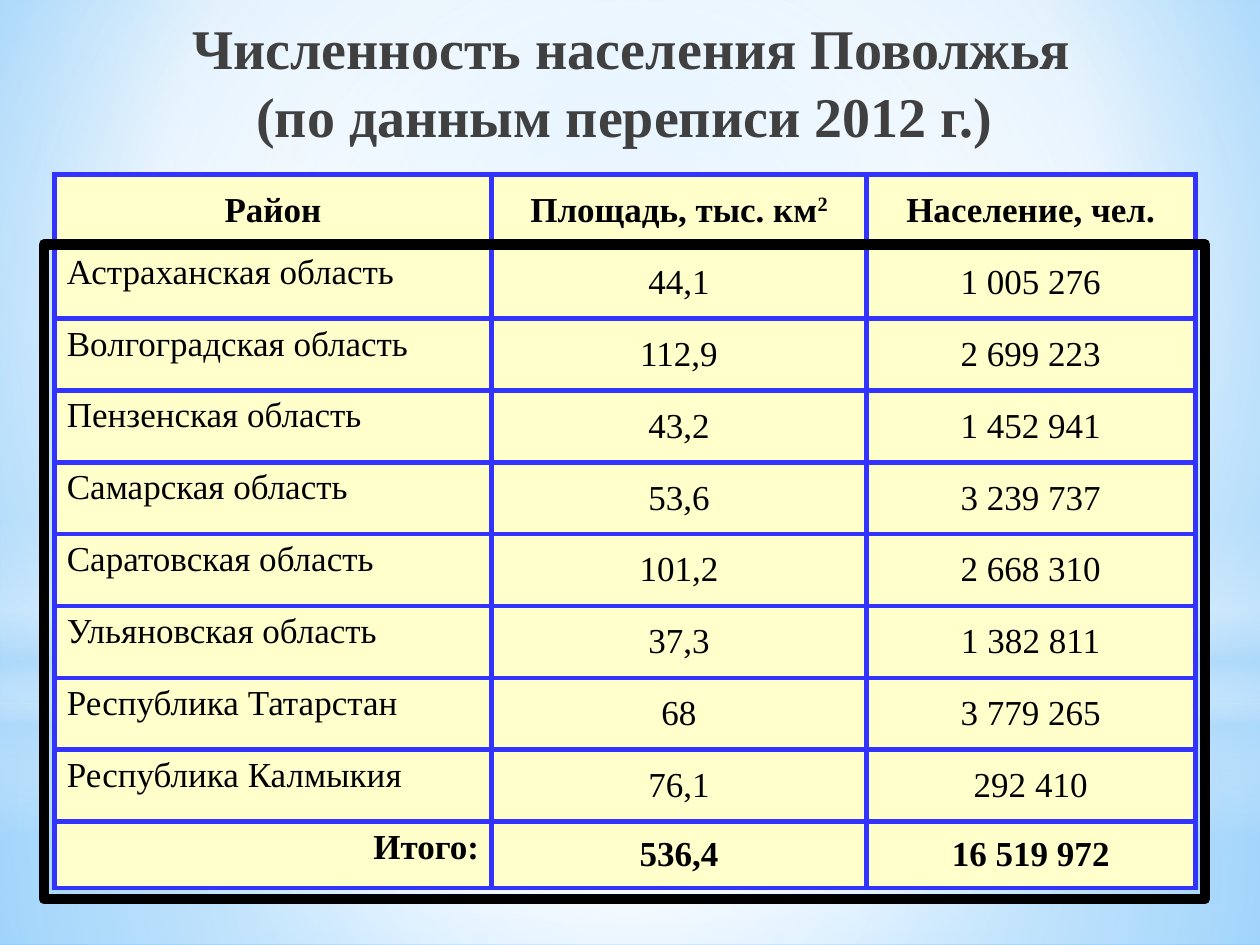
from typing import Any, NamedTuple, Optional

import pptx
import pptx.dml.color
import pptx.enum.shapes
import pptx.enum.text
import pptx.oxml.ns
import pptx.util
from lxml import etree

Pt = pptx.util.Pt
RGBColor = pptx.dml.color.RGBColor
Align = pptx.enum.text.PP_ALIGN
Anchor = pptx.enum.text.MSO_ANCHOR
Shape = pptx.enum.shapes.MSO_SHAPE
qn = pptx.oxml.ns.qn

BLACK = RGBColor(0x00, 0x00, 0x00)
WHITE = RGBColor(0xFF, 0xFF, 0xFF)
GREY = RGBColor(0x40, 0x40, 0x40)
CREAM = RGBColor(0xFF, 0xFF, 0xCC)
BORDER = RGBColor(0x33, 0x33, 0xFF)
SKY = RGBColor(0x9E, 0xD5, 0xFF)
DEEP_SKY = RGBColor(0x5B, 0xB9, 0xFF)
PALE_SKY = RGBColor(0xB4, 0xDC, 0xFA)
FONT = "Times New Roman"
INDENT = Pt(27)


class Stop(NamedTuple):
    pos: int
    color: RGBColor
    opacity: int = 100


class Glow(NamedTuple):
    """A background shape; without a focus its gradient runs downwards."""
    shape: Any
    top: float
    height: float
    stops: list[Stop]
    focus: Optional[tuple[int, ...]]


class Region(NamedTuple):
    name: str
    area: str
    population: str


CENTRE = (50, 50, 50, 50)
GLOWS = [
    Glow(Shape.RECTANGLE, 402, 138,
         [Stop(0, WHITE, 91), Stop(37, WHITE, 76), Stop(100, PALE_SKY, 79)], CENTRE),
    Glow(Shape.RECTANGLE, 0, 402,
         [Stop(0, WHITE, 89), Stop(48, WHITE, 62), Stop(100, PALE_SKY, 79)], CENTRE),
    Glow(Shape.RECTANGLE, 297, 180,
         [Stop(0, WHITE, 0), Stop(29, WHITE, 30), Stop(45, PALE_SKY, 40),
          Stop(55, WHITE, 26), Stop(65, PALE_SKY, 60), Stop(100, WHITE, 0)], None),
    Glow(Shape.OVAL, 126, 402, [Stop(0, WHITE), Stop(56, WHITE, 0)], CENTRE),
]

TITLE = [" Численность населения Поволжья", "(по данным переписи 2012 г.)"]
HEADER = Region("Район", "Площадь, тыс. км²", "Население, чел.")
REGIONS = [
    Region("Астраханская область", "44,1", "1 005 276"),
    Region("Волгоградская область", "112,9", "2 699 223"),
    Region("Пензенская область", "43,2", "1 452 941"),
    Region("Самарская область", "53,6", "3 239 737"),
    Region("Саратовская область", "101,2", "2 668 310"),
    Region("Ульяновская область", "37,3", "1 382 811"),
    Region("Республика Татарстан", "68", "3 779 265"),
    Region("Республика Калмыкия", "76,1", "292 410"),
]
TOTAL = Region("Итого:", "536,4", "16 519 972")
COLUMN_WIDTHS = [250, 214, 188]
ROW_HEIGHT, TOTAL_HEIGHT = 41.1, 38


def set_attrs(obj: Any, values: dict[str, Any]) -> None:
    for name, value in values.items():
        setattr(obj, name, value)


def add_color(parent: Any, color: RGBColor, opacity: int = 100) -> None:
    clr = etree.SubElement(parent, qn("a:srgbClr"), val=str(color))
    if opacity < 100:
        etree.SubElement(clr, qn("a:alpha"), val=str(opacity * 1000))


def set_gradient(fill: Any, owner: Any, stops: list[Stop],
                 focus: Optional[tuple[int, ...]]) -> None:
    """Fill with colour stops, round a focus (left, top, right, bottom in %) or downwards."""
    fill.gradient()
    grad = next(owner.iter(qn("a:gradFill")))
    grad.clear()
    grad.set("rotWithShape", "1")
    gs_lst = etree.SubElement(grad, qn("a:gsLst"))
    for stop in stops:
        gs = etree.SubElement(gs_lst, qn("a:gs"), pos=str(stop.pos * 1000))
        add_color(gs, stop.color, stop.opacity)
    if focus is None:
        etree.SubElement(grad, qn("a:lin"), ang="5400000", scaled="0")
    else:
        circle = etree.SubElement(grad, qn("a:path"), attrib={"path": "circle"})
        sides = {side: str(pct * 1000) for side, pct in zip("ltrb", focus)}
        etree.SubElement(circle, qn("a:fillToRect"), attrib=sides)


def add_glow(s: Any, glow: Glow) -> None:
    sp = s.shapes.add_shape(glow.shape, 0, Pt(glow.top), Pt(720), Pt(glow.height))
    sp.shadow.inherit = False
    sp.line.fill.background()
    set_gradient(sp.fill, sp.element, glow.stops, glow.focus)


def add_run(p: Any, text: str, size: float, bold: bool, color: RGBColor) -> Any:
    r = p.add_run()
    r.text = text
    set_attrs(r.font, {"name": FONT, "size": Pt(size), "bold": bold})
    r.font.color.rgb = color
    return r


def add_title(s: Any) -> None:
    sp = s.shapes.add_textbox(Pt(33), 0, Pt(648), Pt(88.6))
    tf = sp.text_frame
    set_attrs(tf, {"word_wrap": True, "vertical_anchor": Anchor.BOTTOM})
    p = tf.paragraphs[0]
    set_attrs(p, {"alignment": Align.CENTER, "line_spacing": Pt(39)})
    for i, line in enumerate(TITLE):
        if i:
            p.add_line_break()
        add_run(p, line, 32, True, GREY)


def set_borders(cell: Any) -> None:
    tc_pr = cell._tc.get_or_add_tcPr()
    for i, side in enumerate(("lnL", "lnR", "lnT", "lnB")):
        ln = etree.Element(qn("a:" + side), w=str(Pt(3)))
        add_color(etree.SubElement(ln, qn("a:solidFill")), BORDER)
        tc_pr.insert(i, ln)


def fill_cell(cell: Any, text: str, bold: bool, align: Any, anchor: Any) -> None:
    cell.fill.solid()
    cell.fill.fore_color.rgb = CREAM
    cell.vertical_anchor = anchor
    set_borders(cell)
    p = cell.text_frame.paragraphs[0]
    p.alignment = align
    p_pr = p._p.get_or_add_pPr()
    p_pr.set("marL", str(INDENT))
    p_pr.set("indent", str(-INDENT))
    base, squared, _ = text.partition("²")
    add_run(p, base, 20, bold, BLACK)
    if squared:
        r = add_run(p, "2", 20, bold, BLACK)
        r._r.get_or_add_rPr().set("baseline", "30000")


def add_population_table(s: Any) -> None:
    rows = [HEADER, *REGIONS, TOTAL]
    heights = [ROW_HEIGHT] * (len(rows) - 1) + [TOTAL_HEIGHT]
    table = s.shapes.add_table(len(rows), len(COLUMN_WIDTHS), Pt(31), Pt(99.8),
                               Pt(sum(COLUMN_WIDTHS)), Pt(sum(heights))).table
    set_attrs(table, {"first_row": False, "horz_banding": False})
    for column, width in zip(table.columns, COLUMN_WIDTHS):
        column.width = Pt(width)
    for i, (row, height) in enumerate(zip(rows, heights)):
        table.rows[i].height = Pt(height)
        for j, text in enumerate(row):
            align, anchor = Align.CENTER, Anchor.MIDDLE
            if j == 0 and row is not HEADER:
                align = Align.RIGHT if row is TOTAL else Align.JUSTIFY
                anchor = Anchor.TOP
            fill_cell(table.cell(i, j), text, row in (HEADER, TOTAL), align, anchor)


def add_frame(s: Any) -> None:
    sp = s.shapes.add_shape(Shape.RECTANGLE, Pt(25.2), Pt(139.6), Pt(663.3), Pt(374.2))
    sp.shadow.inherit = False
    sp.fill.background()
    sp.line.color.rgb = BLACK
    sp.line.width = Pt(6)


def main() -> None:
    prs = pptx.Presentation()
    set_attrs(prs, {"slide_width": Pt(720), "slide_height": Pt(540)})
    s = prs.slides.add_slide(prs.slide_layouts[6])
    set_gradient(s.background.fill, s.element,
                 [Stop(0, SKY), Stop(60, WHITE), Stop(100, DEEP_SKY)], (20, 10, 20, 60))
    for glow in GLOWS:
        add_glow(s, glow)
    add_title(s)
    add_population_table(s)
    add_frame(s)
    prs.save("out.pptx")


if __name__ == "__main__":
    main()
